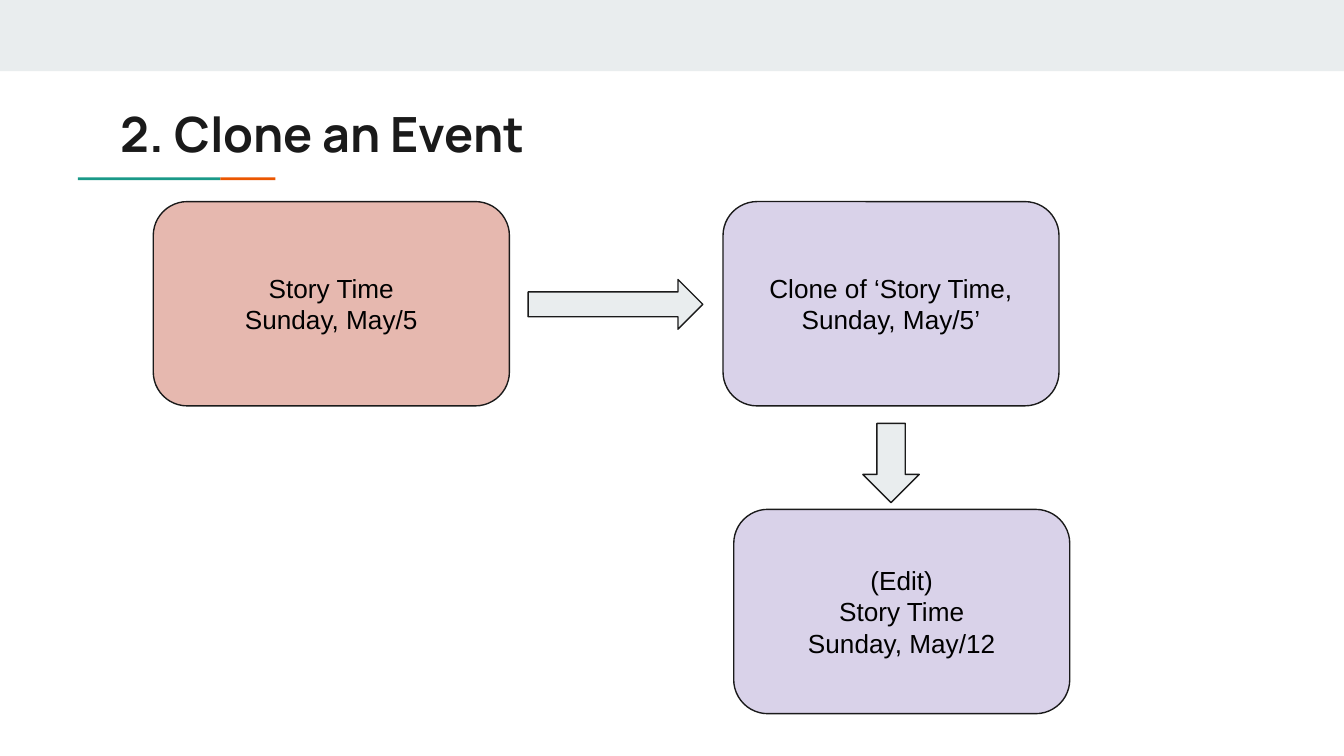
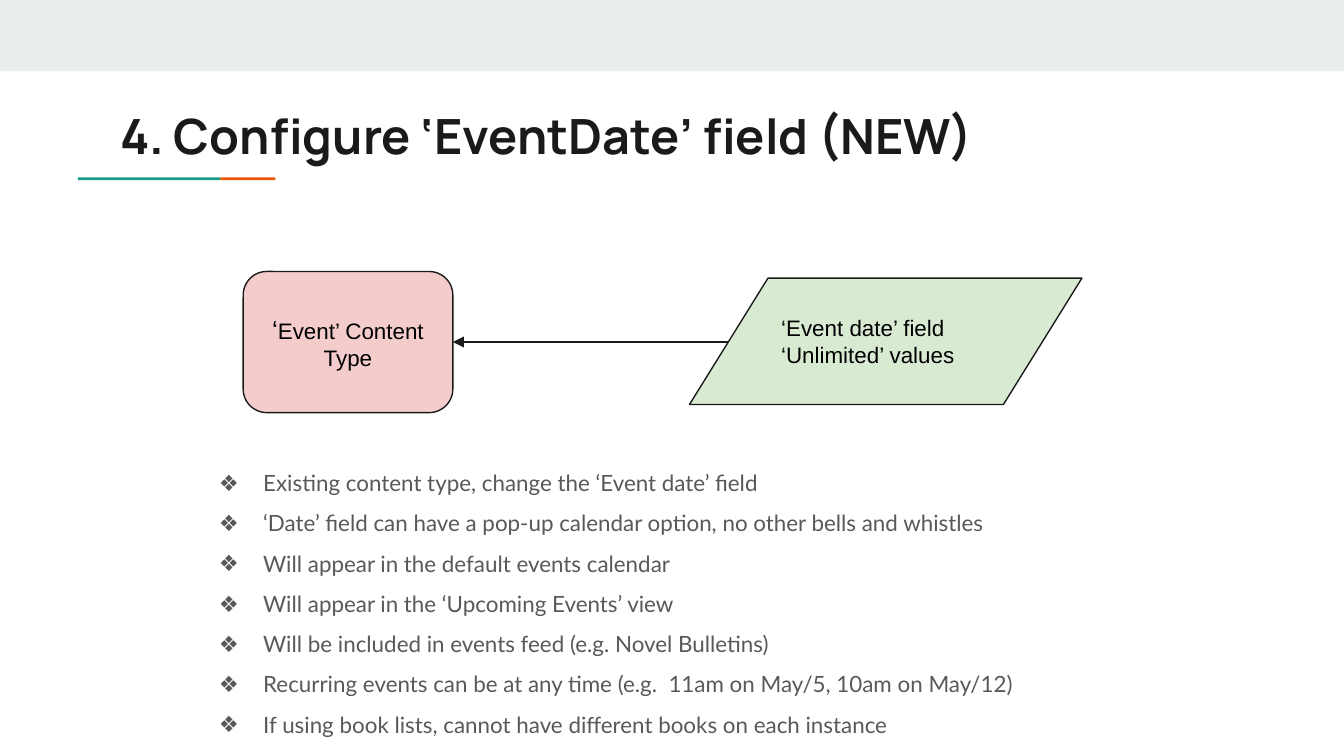
"""Build two slides on cloning an event and configuring its date field."""
from lxml.etree import SubElement
from pptx import Presentation
from pptx.dml.color import RGBColor
from pptx.enum.shapes import MSO_CONNECTOR, MSO_SHAPE
from pptx.enum.text import MSO_ANCHOR, MSO_AUTO_SIZE, PP_ALIGN
from pptx.oxml.ns import qn
from pptx.util import Inches, Pt

WIDTH = 10
HEIGHT = WIDTH * 9 / 16
COLORS = {
    "band": "E9EDEE", "teal": "1A9988", "orange": "EB5600", "ink": "1A1A1A",
    "black": "000000", "gray": "595959", "salmon": "E6B8AF",
    "lilac": "D9D2E9", "pink": "F4CCCC", "green": "D9EAD3",
}
DECORATION = [
    ((0, 0, WIDTH, 0.53), "band"),
    ((0.58, 1.32, 1.06, 0.02), "teal"),
    ((1.64, 1.32, 0.41, 0.02), "orange"),
]

CLONE_TITLE = "2. Clone an Event"
CARD_HEIGHT = 1.52
ROWS = (1.5, 3.79)
CLONE_CARDS = [
    (MSO_SHAPE.FLOWCHART_ALTERNATE_PROCESS, 1.14, 0, 2.65, "salmon",
     ["Story Time", "Sunday, May/5"]),
    (MSO_SHAPE.FLOWCHART_ALTERNATE_PROCESS, 5.38, 0, 2.5, "lilac",
     ["Clone of ‘Story Time, Sunday, May/5’"]),
    (MSO_SHAPE.ROUNDED_RECTANGLE, 5.46, 1, 2.5, "lilac",
     ["(Edit)", "Story Time", "Sunday, May/12"]),
]
CLONE_ARROWS = [
    (MSO_SHAPE.RIGHT_ARROW, (3.93, 2.08, 1.3, 0.37)),
    (MSO_SHAPE.DOWN_ARROW, (6.42, 3.15, 0.42, 0.59)),
]

FIELD_TITLE = "4. Configure ‘EventDate’ field (NEW)"
CONTENT_TYPE = [[("‘", 14), ("Event’ Content Type", 12)]]
DATE_FIELD = [[("‘Event date’ field", 12)], [("‘Unlimited’ values", 12)]]
NOTES = [
    "Existing content type, change the ‘Event date’ field",
    "‘Date’ field can have a pop-up calendar option, no other bells and whistles",
    "Will appear in the default events calendar",
    "Will appear in the ‘Upcoming Events’ view",
    "Will be included in events feed (e.g. Novel Bulletins)",
    "Recurring events can be at any time (e.g.  11am on May/5, 10am on May/12)",
    "If using book lists, cannot have different books on each instance",
]


def color(name):
    return RGBColor.from_string(COLORS[name])


def add_span(para, text, size, font="Arial", ink="black", bold=False):
    span = para.add_run()
    span.text = text
    span.font.size = Pt(size)
    span.font.name = font
    span.font.bold = bold
    span.font.color.rgb = color(ink)


def set_frame(frame, anchor):
    frame.word_wrap = True
    frame.auto_size = MSO_AUTO_SIZE.NONE
    frame.vertical_anchor = anchor
    frame.margin_left = frame.margin_right = Inches(0.1)
    frame.margin_top = frame.margin_bottom = Inches(0.1)


def paragraphs(frame, count):
    return [frame.paragraphs[0]] + [frame.add_paragraph() for _ in range(count - 1)]


def add_box(page, kind, place, fill, outlined=True):
    box = page.shapes.add_shape(kind, *map(Inches, place))
    box.shadow.inherit = False
    box.fill.solid()
    box.fill.fore_color.rgb = color(fill)
    if outlined:
        box.line.color.rgb = color("ink")
        box.line.width = Pt(0.75)
    else:
        box.line.fill.background()
    return box


def add_label(box, lines, align=PP_ALIGN.CENTER):
    set_frame(box.text_frame, MSO_ANCHOR.MIDDLE)
    for para, spans in zip(paragraphs(box.text_frame, len(lines)), lines):
        para.alignment = align
        for text, size in spans:
            add_span(para, text, size)


def add_page(deck, title, top):
    page = deck.slides.add_slide(deck.slide_layouts[5])
    for place, fill in DECORATION:
        add_box(page, MSO_SHAPE.RECTANGLE, place, fill, outlined=False)
    heading = page.shapes.title
    heading.left, heading.top = Inches(0.8), Inches(top)
    heading.width, heading.height = Inches(8.41), Inches(0.59)
    set_frame(heading.text_frame, MSO_ANCHOR.TOP)
    para = heading.text_frame.paragraphs[0]
    para.alignment = PP_ALIGN.LEFT
    add_span(para, title, 26, "Manrope", "ink", bold=True)
    return page


def add_arrow_line(page, left, target):
    middle = target.top + target.height // 2
    line = page.shapes.add_connector(
        MSO_CONNECTOR.STRAIGHT, Inches(left), middle, target.left + target.width, middle)
    line.end_connect(target, 3)
    line.line.color.rgb = color("ink")
    line.line.width = Pt(0.75)
    properties = line.line._get_or_add_ln()
    SubElement(properties, qn("a:tailEnd"), type="triangle")
    SubElement(properties.getparent(), qn("a:effectLst"))


def add_bullet(para):
    para.line_spacing = 1.5
    properties = para._p.get_or_add_pPr()
    properties.set("marL", str(Inches(0.5)))
    properties.set("indent", str(Inches(-0.33)))
    tint = SubElement(properties, qn("a:buClr"))
    SubElement(tint, qn("a:srgbClr"), val=COLORS["gray"])
    SubElement(properties, qn("a:buSzPts"), val="1200")
    SubElement(properties, qn("a:buFont"), typeface="Lato")
    SubElement(properties, qn("a:buChar"), char="❖")


def build_clone_page(deck):
    page = add_page(deck, CLONE_TITLE, 0.67)
    for kind, left, row, width, fill, lines in CLONE_CARDS:
        card = add_box(page, kind, (left, ROWS[row], width, CARD_HEIGHT), fill)
        add_label(card, [[(line, 14)] for line in lines])
    for kind, place in CLONE_ARROWS:
        add_box(page, kind, place, "band")


def build_field_page(deck):
    page = add_page(deck, FIELD_TITLE, 0.69)
    content = add_box(page, MSO_SHAPE.ROUNDED_RECTANGLE, (1.81, 2.02, 1.56, 1.05), "pink")
    add_label(content, CONTENT_TYPE)
    field = add_box(page, MSO_SHAPE.FLOWCHART_DATA, (5.13, 2.07, 2.92, 0.94), "green")
    add_label(field, DATE_FIELD, PP_ALIGN.LEFT)
    add_arrow_line(page, 5.42, content)
    notes = page.shapes.add_textbox(*map(Inches, (1.36, 3.29, 6.32, 2.27)))
    set_frame(notes.text_frame, MSO_ANCHOR.TOP)
    for para, note in zip(paragraphs(notes.text_frame, len(NOTES)), NOTES):
        add_bullet(para)
        add_span(para, note, 12, "Lato", "gray")


def main():
    deck = Presentation()
    deck.slide_width, deck.slide_height = Inches(WIDTH), Inches(HEIGHT)
    build_clone_page(deck)
    build_field_page(deck)
    deck.save("out.pptx")


if __name__ == "__main__":
    main()
